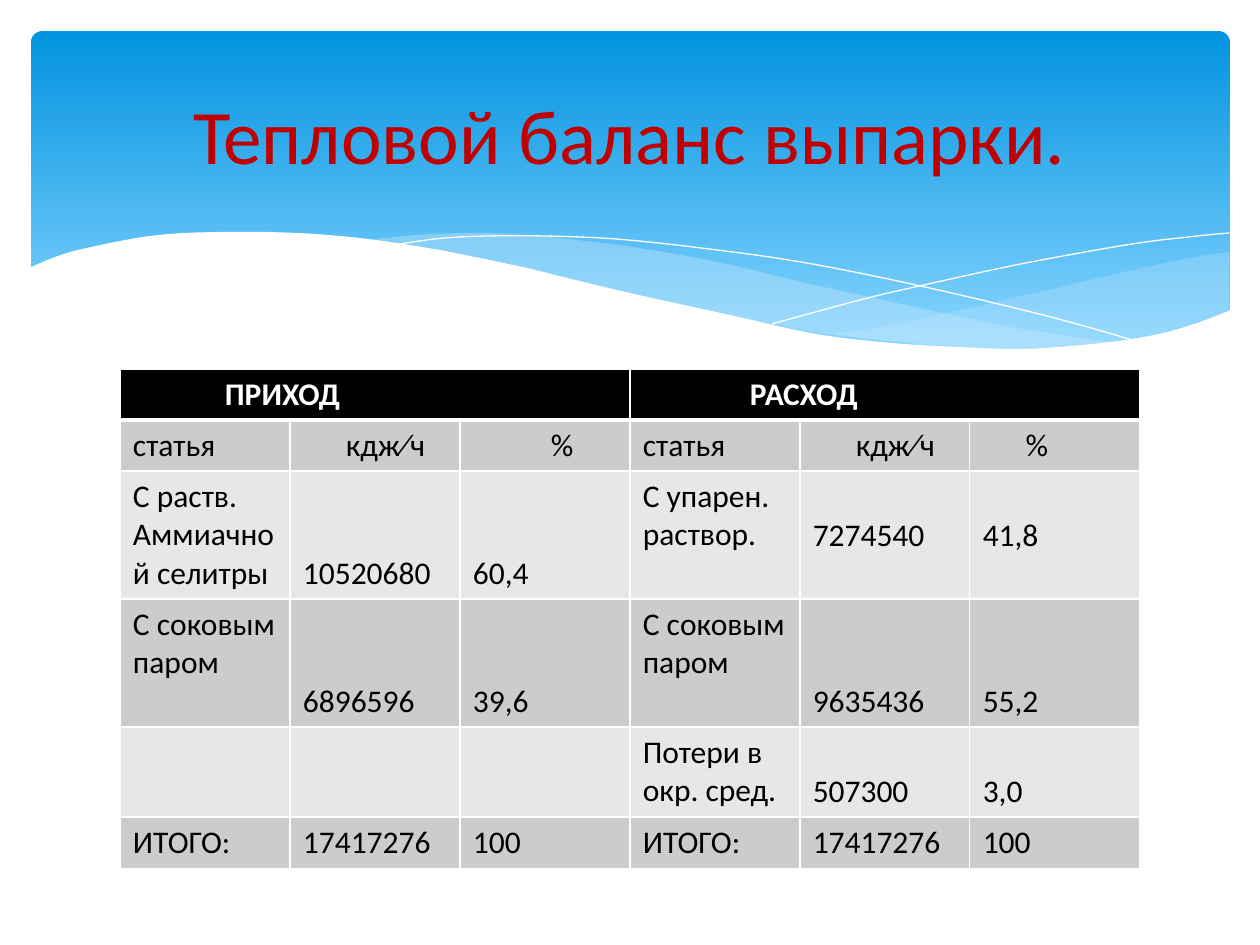
from typing import NamedTuple, Optional

from pptx import Presentation
from pptx.dml.color import RGBColor
from pptx.enum.shapes import MSO_SHAPE as Shape
from pptx.enum.text import MSO_ANCHOR as Anchor, PP_ALIGN as Align
from pptx.oxml.ns import qn
from pptx.util import Emu, Pt
from lxml.etree import SubElement

SCALE = 914400 / 126
FONT = "Calibri"
WHITE = RGBColor(0xFF, 0xFF, 0xFF)
BLACK = RGBColor(0, 0, 0)
RED = RGBColor(0xC0, 0, 0)
SKY_TOP = RGBColor(0x02, 0x93, 0xE0)
SKY_BOTTOM = RGBColor(0x83, 0xD3, 0xFE)
PALE_BLUE = RGBColor(0xC6, 0xE7, 0xFC)
BANDS = (RGBColor(0xCC, 0xCC, 0xCC), RGBColor(0xE7, 0xE7, 0xE7))

Points = list[tuple[float, float]]


class Wave(NamedTuple):
    """Smooth edges joined in turn; without a fill it is an open white line."""
    edges: list[Points]
    fill: Optional[RGBColor] = None
    opacity: int = 100


class Cell(NamedTuple):
    text: str = ""
    indent: int = 0
    anchor: Anchor = Anchor.TOP


WAVES = [
    Wave([[(1229, 252), (1194, 257), (1142, 268), (1085, 281), (1048, 290), (982, 305),
           (919, 319), (861, 330), (833, 334)],
          [(833, 334), (871, 339), (906, 342), (954, 347), (998, 349), (1038, 350),
           (1077, 348), (1110, 344), (1140, 339), (1169, 331), (1196, 323), (1229, 311)]],
         PALE_BLUE, 29),
    Wave([[(1125, 344), (1091, 339), (1017, 328), (934, 311), (842, 291), (793, 280),
           (736, 266), (681, 255), (632, 247), (586, 241), (529, 235), (479, 233),
           (433, 234), (394, 237), (360, 241)],
          [(360, 241), (407, 247), (456, 256), (509, 266), (566, 280), (668, 302),
           (757, 321), (819, 333), (876, 340), (926, 345), (974, 349), (1017, 350),
           (1056, 350), (1092, 348), (1125, 344)]],
         PALE_BLUE, 40),
    Wave([[(389, 246), (413, 242), (445, 238), (488, 236), (545, 236), (616, 239),
           (701, 248), (801, 262), (916, 285), (1047, 316), (1143, 343)]]),
    Wave([[(772, 324), (823, 310), (876, 296), (942, 281), (1016, 265), (1091, 251),
           (1146, 242), (1198, 236), (1229, 233)]]),
    Wave([[(1231, 310), (1197, 323), (1159, 334), (1118, 341), (1071, 346), (1019, 349),
           (959, 347), (892, 343), (816, 334), (730, 315), (634, 294), (563, 277),
           (527, 268), (460, 254), (428, 248), (368, 239), (315, 234), (266, 232),
           (223, 232), (184, 233), (150, 236), (120, 241), (96, 246), (74, 251),
           (58, 256), (45, 261), (29, 268)],
          [(29, 415), (1231, 415)]],
         WHITE),
]

COLUMN_WIDTH = 170
ROW_HEIGHTS = (51, 51, 128, 128, 90, 51)
MID, LOW = Anchor.MIDDLE, Anchor.BOTTOM
ROWS = [
    [Cell("ПРИХОД", 92), Cell(), Cell(), Cell("РАСХОД", 107), Cell(), Cell()],
    [Cell("статья"), Cell("кдж∕ч", 43), Cell("%", 78),
     Cell("статья"), Cell("кдж∕ч", 43), Cell("%", 43)],
    [Cell("С раств. Аммиачной селитры"), Cell("10520680", 0, LOW), Cell("60,4", 0, LOW),
     Cell("С упарен. раствор."), Cell("7274540", 0, MID), Cell("41,8", 0, MID)],
    [Cell("С соковым паром"), Cell("6896596", 0, LOW), Cell("39,6", 0, LOW),
     Cell("С соковым паром"), Cell("9635436", 0, LOW), Cell("55,2", 0, LOW)],
    [Cell(), Cell(), Cell(),
     Cell("Потери в окр. сред."), Cell("507300", 0, LOW), Cell("3,0", 0, LOW)],
    [Cell("ИТОГО:"), Cell("17417276"), Cell("100")] * 2,
]


def px(n: float) -> Emu:
    return Emu(round(n * SCALE))


def smooth(points: Points, steps: int = 4) -> Points:
    """Return points along a Catmull-Rom spline through the given ones."""
    ends = [points[0], *points, points[-1]]
    curve = [points[0]]
    for a, b, c, d in zip(ends, ends[1:], ends[2:], ends[3:]):
        for t in (i / steps for i in range(1, steps + 1)):
            curve.append(tuple(
                (2 * q + (r - p) * t + (2 * p - 5 * q + 4 * r - s) * t ** 2
                 + (3 * q - p - 3 * r + s) * t ** 3) / 2
                for p, q, r, s in zip(a, b, c, d)))
    return curve


def add_wave(shapes, wave: Wave) -> None:
    points = [(px(x), px(y)) for edge in wave.edges for x, y in smooth(edge)]
    builder = shapes.build_freeform(*points[0])
    builder.add_line_segments(points[1:], close=wave.fill is not None)
    sp = builder.convert_to_shape()
    sp.shadow.inherit = False
    if wave.fill is None:
        sp.fill.background()
        sp.line.color.rgb = WHITE
        sp.line.width = 0
        return
    sp.line.fill.background()
    sp.fill.solid()
    sp.fill.fore_color.rgb = wave.fill
    if wave.opacity < 100:
        color = sp._element.spPr.find(qn("a:solidFill"))[0]
        SubElement(color, qn("a:alpha"), val=str(wave.opacity * 1000))


def add_sky(shapes) -> None:
    sp = shapes.add_shape(Shape.ROUNDED_RECTANGLE, px(31), px(31), px(1199), px(340))
    sp.adjustments[0] = 0.034
    sp.shadow.inherit = False
    sp.line.fill.background()
    sp.fill.gradient()
    sp.fill.gradient_angle = 270
    for stop, color, position in zip(sp.fill.gradient_stops, (SKY_TOP, SKY_BOTTOM), (0, 0.9)):
        stop.color.rgb = color
        stop.position = position


def format_run(r, **values) -> None:
    r.font.color.rgb = values.pop("color")
    for name, value in {"name": FONT, **values}.items():
        setattr(r.font, name, value)


def add_borders(cell, bottom: int) -> None:
    """Draw white cell borders; they must precede the fill in the XML."""
    tcPr = cell._tc.get_or_add_tcPr()
    for i, (side, width) in enumerate((("L", 1), ("R", 1), ("T", 1), ("B", bottom))):
        ln = SubElement(tcPr, qn(f"a:ln{side}"), w=str(Pt(width)))
        SubElement(SubElement(ln, qn("a:solidFill")), qn("a:srgbClr"), val=str(WHITE))
        tcPr.insert(i, ln)


def fill_cell(cell, item: Cell, row: int) -> None:
    header = row == 0
    cell.fill.solid()
    cell.fill.fore_color.rgb = BLACK if header else BANDS[(row - 1) % 2]
    add_borders(cell, 3 if header else 1)
    cell.vertical_anchor = item.anchor
    cell.margin_left = px(13 + item.indent)
    if item.text:
        r = cell.text_frame.paragraphs[0].add_run()
        r.text = item.text
        format_run(r, color=WHITE if header else BLACK, size=Pt(18), bold=header)


def add_balance_table(shapes) -> None:
    columns = len(ROWS[0])
    table = shapes.add_table(len(ROWS), columns, px(120), px(369),
                             px(columns * COLUMN_WIDTH), px(sum(ROW_HEIGHTS))).table
    for i, (items, height) in enumerate(zip(ROWS, ROW_HEIGHTS)):
        table.rows[i].height = px(height)
        for j, item in enumerate(items):
            fill_cell(table.cell(i, j), item, i)
    for first in (0, 3):
        table.cell(0, first).merge(table.cell(0, first + 2))


def set_title(shapes, text: str) -> None:
    sp = shapes.title
    for name, value in dict(left=63, top=47, width=1134, height=173).items():
        setattr(sp, name, px(value))
    tf = sp.text_frame
    tf.vertical_anchor = Anchor.MIDDLE
    p = tf.paragraphs[0]
    p.alignment = Align.CENTER
    r = p.add_run()
    r.text = text
    format_run(r, color=RED, size=Pt(44))
    shapes._spTree.append(sp._element)  # bring to front


def main() -> None:
    prs = Presentation()
    prs.slide_width, prs.slide_height = px(1260), px(945)
    shapes = prs.slides.add_slide(prs.slide_layouts[5]).shapes
    add_sky(shapes)
    for wave in WAVES:
        add_wave(shapes, wave)
    add_balance_table(shapes)
    set_title(shapes, "Тепловой баланс выпарки.")
    prs.save("out.pptx")


if __name__ == "__main__":
    main()
